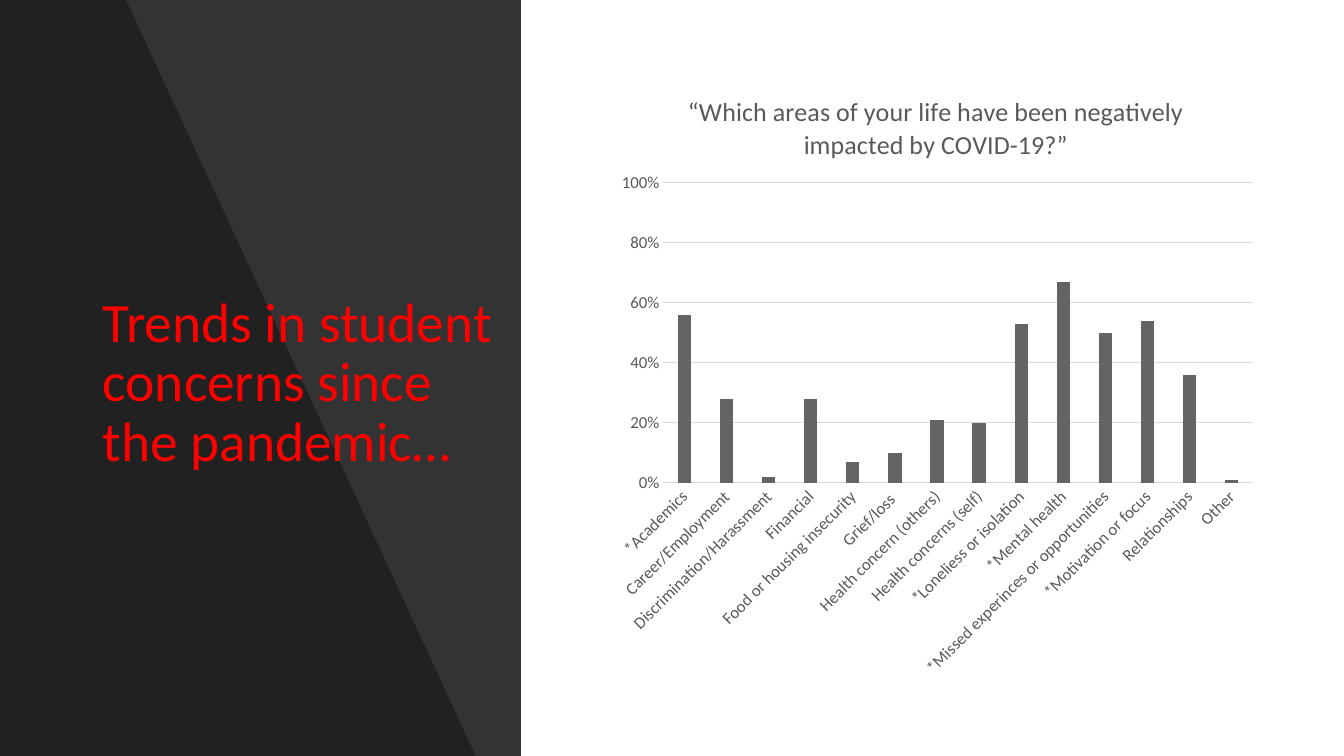
from pptx import Presentation
from pptx.chart.data import CategoryChartData
from pptx.dml.color import RGBColor
from pptx.enum.chart import XL_CHART_TYPE as ChartType, XL_TICK_MARK as TickMark
from pptx.enum.shapes import MSO_SHAPE as Shape
from pptx.enum.text import MSO_ANCHOR as Anchor, MSO_AUTO_SIZE as AutoSize, PP_ALIGN as Align
from pptx.oxml import parse_xml
from pptx.oxml.ns import nsdecls, qn
from pptx.util import Pt

FONT = "Calibri"
COLORS = {
    "panel": "000000",
    "heading": "FF0000",
    "label": "595959",
    "line": "D9D9D9",
    "bar": "646464",
}
TITLE = "Trends in student concerns since the pandemic…"
QUESTION = "“Which areas of your life have been negatively impacted by COVID-19?”"
CONCERNS = {
    "*Academics": 0.56,
    "Career/Employment": 0.28,
    "Discrimination/Harassment": 0.02,
    "Financial": 0.28,
    "Food or housing insecurity": 0.07,
    "Grief/loss ": 0.1,
    "Health concern (others)": 0.21,
    "Health concerns (self)": 0.2,
    "*Loneliess or isolation": 0.53,
    "*Mental health": 0.67,
    "*Missed experinces or opportunities": 0.5,
    "*Motivation or focus": 0.54,
    "Relationships": 0.36,
    "Other": 0.01,
}


def color(name):
    return RGBColor.from_string(COLORS[name])


def style_font(font, size, color_name):
    font.name = FONT
    font.size = Pt(size)
    font.bold = False
    font.color.rgb = color(color_name)


def style_line(line):
    line.color.rgb = color("line")
    line.width = Pt(0.75)


def style_panel(shape, opacity):
    """Fill a panel with translucent black and no outline."""
    shape.shadow.inherit = False
    shape.line.fill.background()
    shape.fill.solid()
    shape.fill.fore_color.rgb = color("panel")
    fill_color = shape.element.spPr.find(f".//{qn('a:srgbClr')}")
    fill_color.append(parse_xml(f'<a:alpha {nsdecls("a")} val="{opacity * 1000}"/>'))


def add_side_panels(slide):
    panel = slide.shapes.add_shape(Shape.RECTANGLE, 0, 0, Pt(372.2), Pt(540))
    style_panel(panel, 80)
    builder = slide.shapes.build_freeform(0, 0)
    corners = [(90, 0), (339.8, 540), (0, 540)]
    builder.add_line_segments([(Pt(x), Pt(y)) for x, y in corners], close=True)
    style_panel(builder.convert_to_shape(), 35)


def set_title(slide):
    title = slide.shapes.title
    title.left, title.top, title.width, title.height = Pt(66.2), Pt(150.5), Pt(295.2), Pt(290.9)
    frame = title.text_frame
    frame.text = TITLE
    frame.word_wrap = True
    frame.auto_size = AutoSize.NONE
    frame.vertical_anchor = Anchor.MIDDLE
    frame.margin_bottom = Pt(47)
    paragraph = frame.paragraphs[0]
    paragraph.alignment = Align.LEFT
    paragraph.line_spacing = 0.9
    style_font(paragraph.runs[0].font, 39.6, "heading")
    title.element.getparent().append(title.element)  # in front of the panels


def manual_layout(target, **fractions):
    """Build a chart layout from fractions of the chart's size."""
    inner = f'<c:layoutTarget val="{target}"/>' if target else ""
    modes = "".join(f'<c:{key}Mode val="edge"/>' for key in ("x", "y"))
    values = "".join(f'<c:{key} val="{value}"/>' for key, value in fractions.items())
    return parse_xml(
        f'<c:layout {nsdecls("c")}><c:manualLayout>{inner}{modes}{values}'
        "</c:manualLayout></c:layout>"
    )


def place(element, layout, position):
    for existing in element.findall(qn("c:layout")):
        element.remove(existing)
    element.insert(position, layout)


def style_axes(chart):
    for axis in (chart.category_axis, chart.value_axis):
        axis.major_tick_mark = axis.minor_tick_mark = TickMark.NONE
        style_font(axis.tick_labels.font, 12, "label")
    categories, values = chart.category_axis, chart.value_axis
    style_line(categories.format.line)
    body = categories.tick_labels.font
    categories_text = categories._element.find(f"{qn('c:txPr')}/{qn('a:bodyPr')}")
    categories_text.set("rot", "-2700000")
    categories_text.set("vert", "horz")
    values.format.line.fill.background()
    values.minimum_scale, values.maximum_scale, values.major_unit = 0, 1, 0.2
    style_line(values.major_gridlines.format.line)
    values.tick_labels.number_format = "0%"
    values.tick_labels.number_format_is_linked = False


def add_concerns_chart(slide):
    data = CategoryChartData(number_format="0%")
    data.categories = list(CONCERNS)
    data.add_series("Series 1", list(CONCERNS.values()))
    chart = slide.shapes.add_chart(
        ChartType.COLUMN_CLUSTERED, Pt(431.3), Pt(45.4), Pt(473), Pt(447.1), data
    ).chart
    chart.font.name = FONT
    chart.font.size = Pt(10)
    chart.has_legend = False

    chart.has_title = True
    heading = chart.chart_title
    heading.include_in_layout = False
    heading.text_frame.text = QUESTION
    style_font(heading.text_frame.paragraphs[0].runs[0].font, 18.6, "label")
    place(heading._element, manual_layout("", x=0.12, y=0.04), 1)

    plot = chart.plots[0]
    plot.gap_width, plot.overlap, plot.vary_by_categories = 219, -27, False
    bars = plot.series[0].format
    bars.fill.solid()
    bars.fill.fore_color.rgb = color("bar")
    style_axes(chart)
    plot_area = chart._chartSpace.chart.plotArea
    place(plot_area, manual_layout("inner", x=0.09, y=0.19, w=0.89, h=0.48), 0)


def main():
    presentation = Presentation()
    presentation.slide_width, presentation.slide_height = Pt(960), Pt(540)
    slide = presentation.slides.add_slide(presentation.slide_layouts[5])
    add_side_panels(slide)
    set_title(slide)
    add_concerns_chart(slide)
    presentation.save("out.pptx")


if __name__ == "__main__":
    main()
